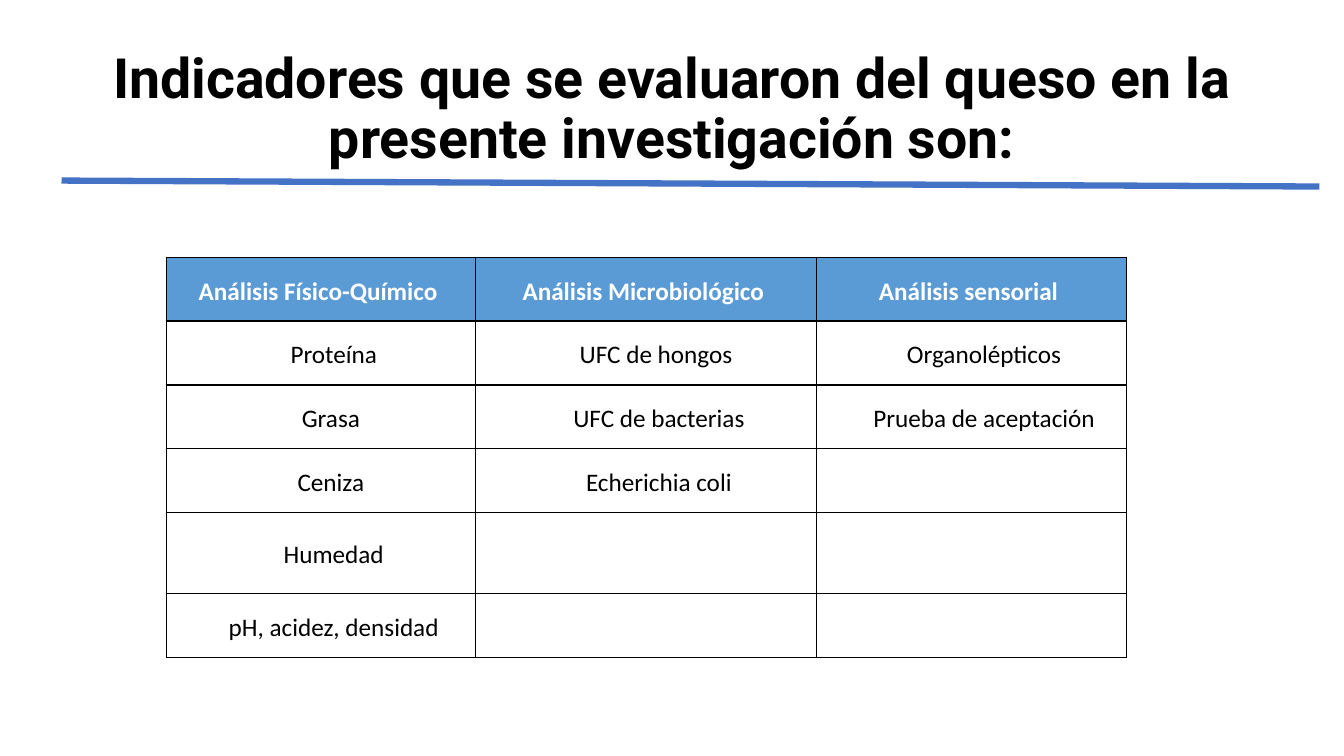
from dataclasses import dataclass

from lxml import etree
from pptx import Presentation
from pptx.dml.color import RGBColor
from pptx.enum.shapes import MSO_CONNECTOR
from pptx.enum.text import MSO_ANCHOR, PP_ALIGN
from pptx.oxml.ns import qn
from pptx.util import Cm, Pt

CENTER = PP_ALIGN.CENTER
MIDDLE = MSO_ANCHOR.MIDDLE
STRAIGHT = MSO_CONNECTOR.STRAIGHT


@dataclass(frozen=True)
class Theme:
    title_font: str = "Roboto"
    body_font: str = "Calibri"
    title_size: float = 39.6
    body_size: float = 18
    black: RGBColor = RGBColor(0x00, 0x00, 0x00)
    white: RGBColor = RGBColor(0xFF, 0xFF, 0xFF)
    header: RGBColor = RGBColor(0x5B, 0x9B, 0xD5)
    rule: RGBColor = RGBColor(0x44, 0x72, 0xC4)


THEME = Theme()
COLUMN_WIDTHS = [7.8, 8.59, 7.8]
ROW_HEIGHTS = [1.61, 1.61, 1.61, 1.61, 2.03, 1.61]
INDICATORS = [
    ["Análisis Físico-Químico ", "Análisis Microbiológico ", "Análisis sensorial "],
    ["Proteína", "UFC de hongos ", "Organolépticos"],
    ["Grasa ", "UFC de bacterias", "Prueba de aceptación"],
    ["Ceniza ", "Echerichia coli", ""],
    ["Humedad", "", ""],
    ["pH, acidez, densidad", "", ""],
]


def write_centered(text_frame, text, font_name, size, color, bold, spacing):
    text_frame.text = text
    paragraph = text_frame.paragraphs[0]
    paragraph.alignment = CENTER
    paragraph.line_spacing = spacing
    for run in paragraph.runs:
        run.font.name = font_name
        run.font.size = Pt(size)
        run.font.bold = bold
        run.font.color.rgb = color
    return paragraph


def add_borders(cell, color, width):
    """Draw all four cell edges; they must come before the fill in the XML."""
    properties = cell._tc.get_or_add_tcPr()
    for position, edge in enumerate(("lnL", "lnR", "lnT", "lnB")):
        line = etree.Element(qn(f"a:{edge}"), w=str(Pt(width)))
        fill = etree.SubElement(line, qn("a:solidFill"))
        etree.SubElement(fill, qn("a:srgbClr"), val=str(color))
        properties.insert(position, line)


presentation = Presentation()
presentation.slide_width = Cm(33.87)
presentation.slide_height = Cm(19.05)
slide = presentation.slides.add_slide(presentation.slide_layouts[6])

# Title
title = slide.shapes.add_textbox(Cm(2.33), Cm(0.94), Cm(29.21), Cm(3.68))
title.text_frame.word_wrap = True
title.text_frame.vertical_anchor = MIDDLE
write_centered(
    title.text_frame,
    "Indicadores que se evaluaron del queso en la presente investigación son:",
    THEME.title_font, THEME.title_size, THEME.black, True, 0.9,
)

# Table of indicators
table = slide.shapes.add_table(
    len(INDICATORS), len(COLUMN_WIDTHS), Cm(4.19), Cm(6.48),
    Cm(sum(COLUMN_WIDTHS)), Cm(sum(ROW_HEIGHTS)),
).table
table.first_row = False
table.horz_banding = False
for column, width in zip(table.columns, COLUMN_WIDTHS):
    column.width = Cm(width)
for row, height in zip(table.rows, ROW_HEIGHTS):
    row.height = Cm(height)

for row_index, labels in enumerate(INDICATORS):
    is_header = row_index == 0
    for column_index, label in enumerate(labels):
        cell = table.cell(row_index, column_index)
        cell.fill.solid()
        cell.fill.fore_color.rgb = THEME.header if is_header else THEME.white
        add_borders(cell, THEME.black, 1)
        cell.vertical_anchor = MIDDLE
        cell.margin_left = cell.margin_right = Cm(0.19)
        cell.margin_top = cell.margin_bottom = 0
        paragraph = write_centered(
            cell.text_frame, label, THEME.body_font, THEME.body_size,
            THEME.white if is_header else THEME.black, is_header, 1.15,
        )
        if not is_header:
            paragraph_properties = paragraph._p.get_or_add_pPr()
            paragraph_properties.set("marL", str(Cm(0.64)))
            paragraph_properties.set("indent", "0")

# Rule under the title
rule = slide.shapes.add_connector(STRAIGHT, Cm(1.55), Cm(4.55), Cm(33.25), Cm(4.7))
rule.line.color.rgb = THEME.rule
rule.line.width = Pt(4.5)
etree.SubElement(rule._element.spPr, qn("a:effectLst"))

presentation.save("out.pptx")
